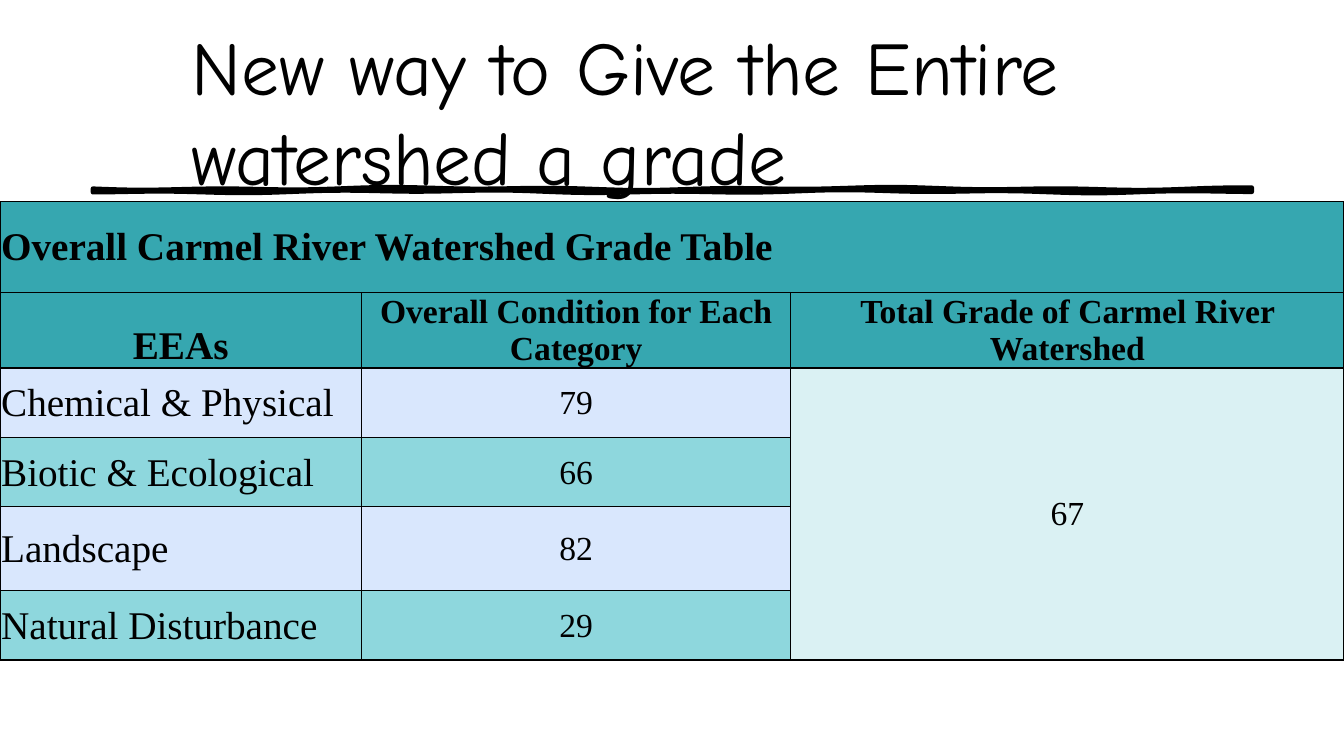
from math import sin

from lxml.etree import SubElement
from pptx import Presentation
from pptx.dml.color import RGBColor
from pptx.enum.text import MSO_ANCHOR, MSO_AUTO_SIZE, PP_ALIGN
from pptx.oxml.ns import qn
from pptx.util import Cm, Pt

COLORS = {
    "ink": "000000",
    "header": "36A7B0",
    "pale_blue": "D9E7FD",
    "aqua": "8ED7DD",
    "total": "DAF1F3",
}
TITLE_FONT = "Comic Neue"
TABLE_FONT = "Times New Roman"
COLUMN_WIDTHS = (9.11, 10.82, 13.94)
ROW_HEIGHTS = (2.29, 1.83, 1.75, 1.75, 2.11, 1.75)
HEADINGS = (
    ("EEAs", 28),
    ("Overall Condition for Each Category", 24),
    ("Total Grade of Carmel River Watershed", 24),
)
GRADES = (
    ("Chemical & Physical", "79"),
    ("Biotic & Ecological", "66"),
    ("Landscape", "82"),
    ("Natural Disturbance", "29"),
)
TOTAL_GRADE = "67"


def color(name):
    return RGBColor.from_string(COLORS[name])


def style_font(paragraph, name, size, bold=False):
    paragraph.font.name = name
    paragraph.font.size = Pt(size)
    paragraph.font.bold = bold
    paragraph.font.color.rgb = color("ink")


def add_title(slide, text):
    title = slide.shapes.title
    title.left, title.top = Cm(4.57), Cm(0.94)
    title.width, title.height = Cm(25.86), Cm(3.68)
    frame = title.text_frame
    frame.text = text
    frame.word_wrap = True
    frame.auto_size = MSO_AUTO_SIZE.NONE
    frame.vertical_anchor = MSO_ANCHOR.MIDDLE
    frame.paragraphs[0].alignment = PP_ALIGN.LEFT
    style_font(frame.paragraphs[0], TITLE_FONT, 54)


def add_brush_rule(slide, left, top, width, thickness, steps=96):
    def edge(base, phase):
        return [
            (Cm(left + width * i / steps),
             Cm(base + 0.02 * sin(0.45 * i + phase) + 0.02 * sin(0.17 * i)))
            for i in range(steps + 1)
        ]

    outline = edge(top, 0) + edge(top + thickness, 2)[::-1]
    builder = slide.shapes.build_freeform(*outline[0], scale=1.0)
    builder.add_line_segments(outline[1:], close=True)
    rule = builder.convert_to_shape()
    rule.shadow.inherit = False
    rule.fill.solid()
    rule.fill.fore_color.rgb = color("ink")
    rule.line.color.rgb = color("ink")
    rule.line.width = Pt(3)


def add_borders(cell):
    properties = cell._tc.get_or_add_tcPr()
    for position, side in enumerate(("lnL", "lnR", "lnT", "lnB")):
        border = SubElement(properties, qn(f"a:{side}"), w=str(Pt(1)))
        fill = SubElement(border, qn("a:solidFill"))
        SubElement(fill, qn("a:srgbClr"), val=COLORS["ink"])
        properties.insert(position, border)


def fill_cell(cell, text, fill, size, bold=False,
              align=PP_ALIGN.CENTER, anchor=MSO_ANCHOR.MIDDLE):
    cell.text = text
    cell.fill.solid()
    cell.fill.fore_color.rgb = color(fill)
    cell.vertical_anchor = anchor
    cell.margin_left = cell.margin_right = cell.margin_top = Cm(0.03)
    cell.margin_bottom = 0
    paragraph = cell.text_frame.paragraphs[0]
    paragraph.alignment = align
    style_font(paragraph, TABLE_FONT, size, bold)


def add_grade_table(slide):
    grades = slide.shapes.add_table(
        len(ROW_HEIGHTS), len(COLUMN_WIDTHS), 0, Cm(5.08),
        Cm(sum(COLUMN_WIDTHS)), Cm(sum(ROW_HEIGHTS))).table
    grades.horz_banding = False
    for column, width in zip(grades.columns, COLUMN_WIDTHS):
        column.width = Cm(width)
    for row, height in zip(grades.rows, ROW_HEIGHTS):
        row.height = Cm(height)

    grades.cell(0, 0).merge(grades.cell(0, 2))
    grades.cell(2, 2).merge(grades.cell(5, 2))
    fill_cell(grades.cell(0, 0), "Overall Carmel River Watershed Grade Table",
              "header", 28, bold=True, align=PP_ALIGN.LEFT)
    for column, (heading, size) in enumerate(HEADINGS):
        fill_cell(grades.cell(1, column), heading, "header", size,
                  bold=True, anchor=MSO_ANCHOR.BOTTOM)
    for row, (category, grade) in enumerate(GRADES, start=2):
        band = "aqua" if row % 2 else "pale_blue"
        fill_cell(grades.cell(row, 0), category, band, 28, align=PP_ALIGN.LEFT)
        fill_cell(grades.cell(row, 1), grade, band, 24)
    fill_cell(grades.cell(2, 2), TOTAL_GRADE, "total", 24)
    for cell in grades.iter_cells():
        add_borders(cell)


def main():
    deck = Presentation()
    deck.slide_width, deck.slide_height = Cm(33.87), Cm(19.05)
    slide = deck.slides.add_slide(deck.slide_layouts[5])
    add_brush_rule(slide, left=2.34, top=4.75, width=29.21, thickness=0.08)
    add_title(slide, "New way to Give the Entire watershed a grade")
    add_grade_table(slide)
    deck.save("out.pptx")


if __name__ == "__main__":
    main()
